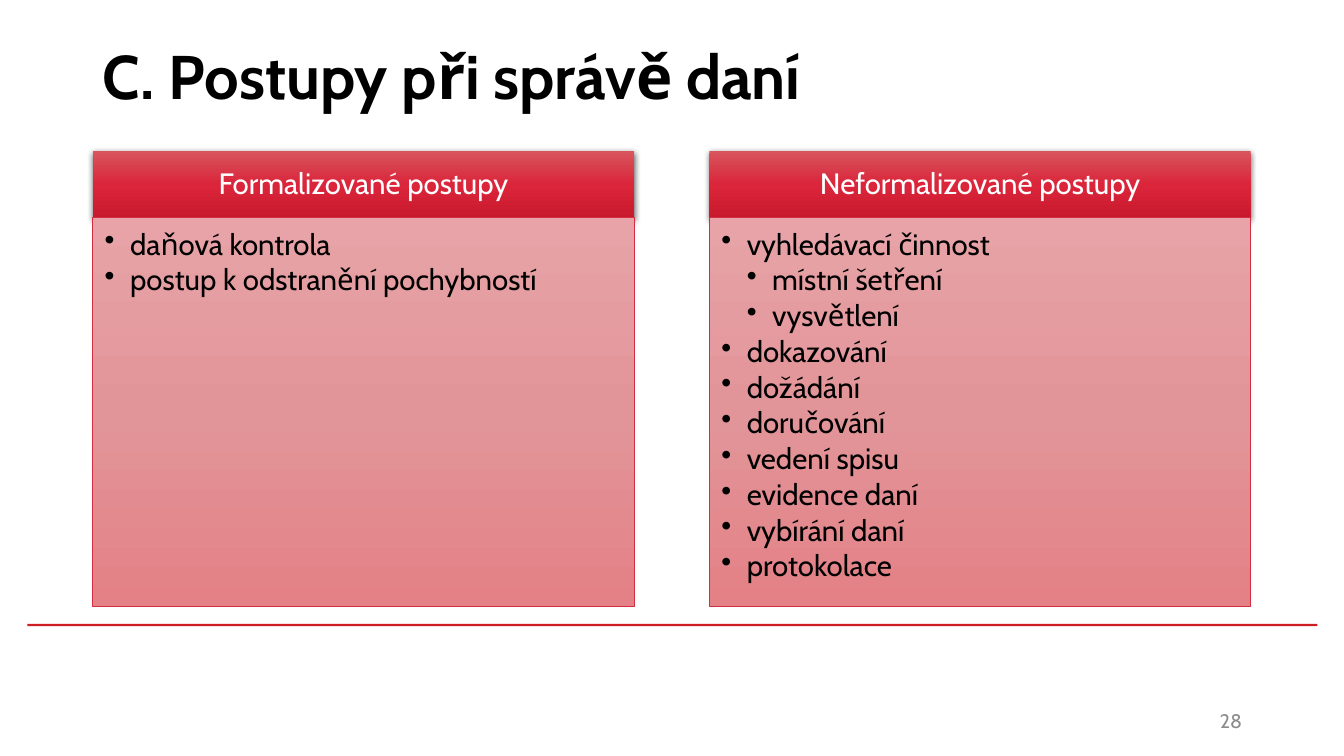
from lxml.etree import SubElement
from pptx import Presentation
from pptx.dml.color import RGBColor
from pptx.enum.shapes import MSO_SHAPE
from pptx.enum.text import MSO_ANCHOR, PP_ALIGN
from pptx.oxml.ns import qn
from pptx.util import Cm, Pt

BLACK = RGBColor(0x00, 0x00, 0x00)
WHITE = RGBColor(0xFF, 0xFF, 0xFF)
GREY = RGBColor(0x8C, 0x8C, 0x8C)
RULE_RED = RGBColor(0xCD, 0x1F, 0x21)
BORDER_RED = RGBColor(0xD2, 0x2D, 0x40)
HEADER_GRADIENT = (RGBColor(0xD8, 0x55, 0x5E), RGBColor(0xDA, 0x25, 0x3A), RGBColor(0xC9, 0x19, 0x2E))
BODY_GRADIENT = (RGBColor(0xE7, 0xA3, 0xA7), RGBColor(0xE2, 0x95, 0x99), RGBColor(0xE3, 0x81, 0x86))

FONT = "Cabin"
HEADER_HEIGHT = Cm(1.68)
BULLET_INDENT = Cm(0.64)
COLUMN_TOP, COLUMN_WIDTH, COLUMN_HEIGHT = Cm(3.81), Cm(13.64), Cm(11.46)
FIRST_COLUMN_LEFT, COLUMN_STEP = Cm(2.34), Cm(15.54)

COLUMNS = [
    ("Formalizované postupy", [
        (0, "daňová kontrola"),
        (0, "postup k odstranění pochybností"),
    ]),
    ("Neformalizované postupy", [
        (0, "vyhledávací činnost"),
        (1, "místní šetření"),
        (1, "vysvětlení"),
        (0, "dokazování"),
        (0, "dožádání"),
        (0, "doručování"),
        (0, "vedení spisu"),
        (0, "evidence daní"),
        (0, "vybírání daní"),
        (0, "protokolace"),
    ]),
]


def format_paragraph(paragraph, size, color, alignment=PP_ALIGN.LEFT, bold=False):
    paragraph.alignment = alignment
    for run in paragraph.runs:
        run.font.name = FONT
        run.font.size = Pt(size)
        run.font.bold = bold
        run.font.color.rgb = color


def set_margins(text_frame, left, top, right, bottom):
    text_frame.margin_left, text_frame.margin_top = Cm(left), Cm(top)
    text_frame.margin_right, text_frame.margin_bottom = Cm(right), Cm(bottom)


def add_rectangle(slide, left, top, width, height):
    shape = slide.shapes.add_shape(MSO_SHAPE.RECTANGLE, left, top, width, height)
    shape.shadow.inherit = False
    shape.line.fill.background()
    return shape


def fill_gradient(shape, colors):
    shape.fill.gradient()
    shape.fill.gradient_angle = 270
    stops = shape._element.spPr.find(qn("a:gradFill")).find(qn("a:gsLst"))
    for stop in list(stops):
        stops.remove(stop)
    for index, color in enumerate(colors):
        stop = SubElement(stops, qn("a:gs"), pos=str(index * 50000))
        SubElement(stop, qn("a:srgbClr"), val=str(color))


def add_soft_shadow(shape):
    effects = shape._element.spPr.find(qn("a:effectLst"))
    shadow = SubElement(effects, qn("a:outerShdw"), blurRad=str(Pt(4.5)),
                        dist=str(Pt(1.5)), dir="5400000", rotWithShape="0")
    color = SubElement(shadow, qn("a:srgbClr"), val=str(BLACK))
    SubElement(color, qn("a:alpha"), val="63000")


def add_bullet(paragraph, level):
    paragraph.level = level
    properties = paragraph._p.get_or_add_pPr()
    properties.set("marL", str(BULLET_INDENT * (level + 1)))
    properties.set("indent", str(-BULLET_INDENT))
    SubElement(properties, qn("a:buChar"), char="•")


def add_title(slide, text, left, top, width, height):
    title = slide.shapes.title
    title.left, title.top, title.width, title.height = left, top, width, height
    title.text_frame.text = text
    title.text_frame.vertical_anchor = MSO_ANCHOR.MIDDLE
    format_paragraph(title.text_frame.paragraphs[0], 44, BLACK, bold=True)


def add_column(slide, heading, items, left, top, width, height):
    header = add_rectangle(slide, left, top, width, HEADER_HEIGHT)
    fill_gradient(header, HEADER_GRADIENT)
    add_soft_shadow(header)
    header_frame = header.text_frame
    header_frame.text = heading
    header_frame.vertical_anchor = MSO_ANCHOR.MIDDLE
    set_margins(header_frame, 0.41, 0.23, 0.41, 0.23)
    header_frame.paragraphs[0].line_spacing = 0.9
    format_paragraph(header_frame.paragraphs[0], 21, WHITE, PP_ALIGN.CENTER)

    body = add_rectangle(slide, left, top + HEADER_HEIGHT, width, height - HEADER_HEIGHT)
    fill_gradient(body, BODY_GRADIENT)
    body.line.color.rgb = BORDER_RED
    body.line.width = Pt(0.5)
    body_frame = body.text_frame
    body_frame.text = "\n".join(text for _, text in items)
    body_frame.vertical_anchor = MSO_ANCHOR.TOP
    set_margins(body_frame, 0.3, 0.3, 0.41, 0.46)
    for paragraph, (level, _) in zip(body_frame.paragraphs, items):
        add_bullet(paragraph, level)
        paragraph.line_spacing = 0.9
        paragraph.space_after = Pt(2.85)
        format_paragraph(paragraph, 21, BLACK)


def add_footer(slide, number, left, top, width, height):
    rule = add_rectangle(slide, left, top, width, Cm(0.06))
    rule.fill.solid()
    rule.fill.fore_color.rgb = RULE_RED
    number_width, number_height = Cm(7.62), Cm(1.01)
    box = slide.shapes.add_textbox(left + width - Cm(1.65) - number_width,
                                   top + height - number_height, number_width, number_height)
    box.text_frame.word_wrap = True
    box.text_frame.text = number
    box.text_frame.vertical_anchor = MSO_ANCHOR.MIDDLE
    format_paragraph(box.text_frame.paragraphs[0], 14, GREY, PP_ALIGN.RIGHT)


def main():
    presentation = Presentation()
    presentation.slide_width, presentation.slide_height = Cm(33.87), Cm(19.05)
    slide = presentation.slides.add_slide(presentation.slide_layouts[5])
    add_footer(slide, "28", Cm(0.69), Cm(15.72), Cm(32.51), Cm(2.95))
    add_title(slide, "C. Postupy při správě daní", FIRST_COLUMN_LEFT, Cm(0.05), Cm(29.21), Cm(3.68))
    for index, (heading, items) in enumerate(COLUMNS):
        add_column(slide, heading, items, FIRST_COLUMN_LEFT + index * COLUMN_STEP,
                   COLUMN_TOP, COLUMN_WIDTH, COLUMN_HEIGHT)
    presentation.save("out.pptx")


if __name__ == "__main__":
    main()
